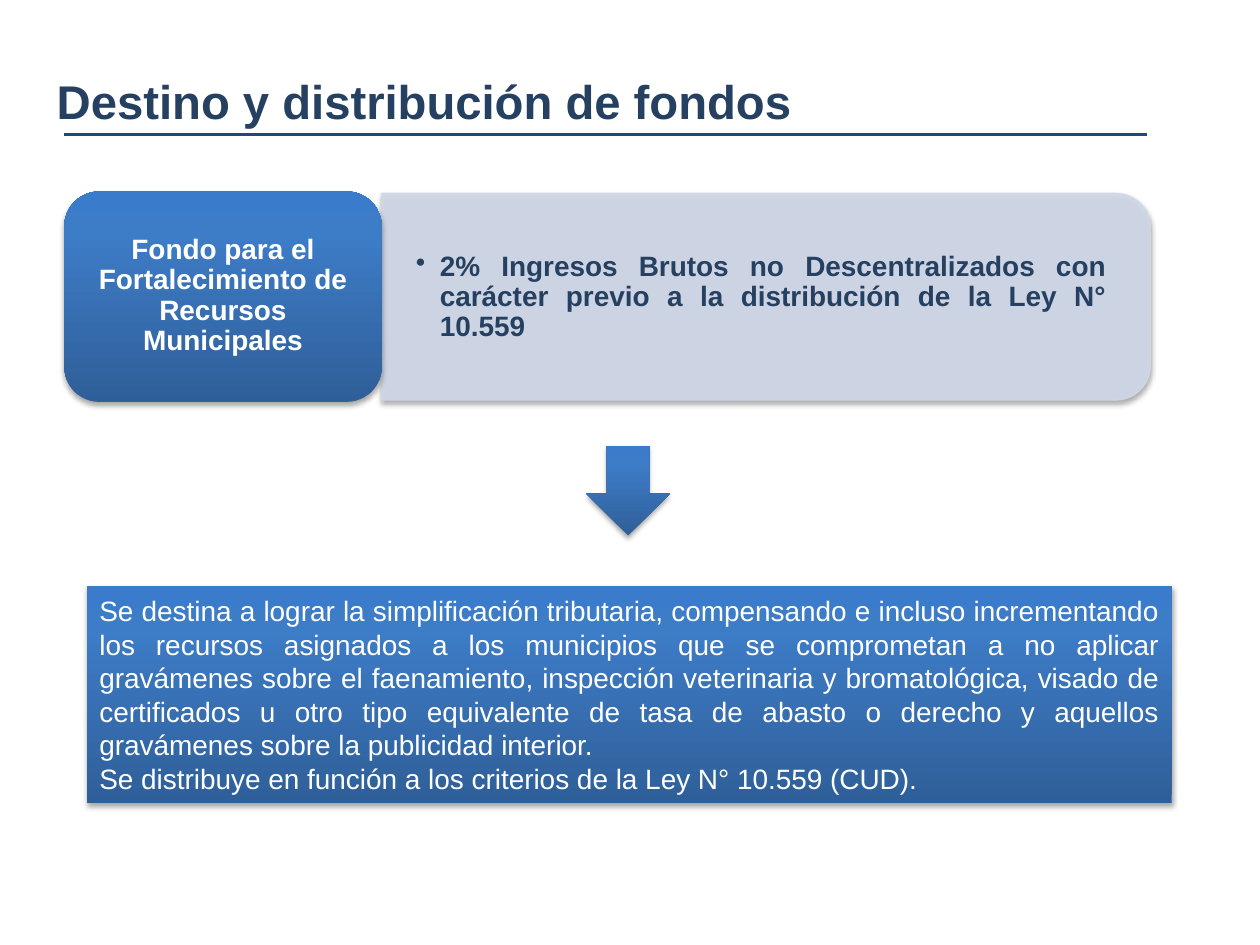
from lxml.etree import SubElement as Sub
from pptx import Presentation
from pptx.dml.color import RGBColor as RGB
from pptx.enum.shapes import MSO_CONNECTOR as Line, MSO_SHAPE as Kind
from pptx.enum.text import MSO_ANCHOR as Anchor, MSO_AUTO_SIZE as Auto, PP_ALIGN as Align
from pptx.oxml import parse_xml
from pptx.oxml.ns import nsdecls, qn
from pptx.util import Inches, Pt

HUES = {"rule": "1F497D", "navy": "254061", "white": "FFFFFF", "pale": "D0D8E8",
        "dark": "2F5F99", "mid": "3D7CC7", "light": "3A7CCB", "black": "000000"}
FONT = "Arial"


def hue(name):
    return RGB.from_string(HUES[name])


def inch(*nums):
    return [Inches(n) for n in nums]


def shade(shape):
    """Soft shadow falling straight down."""
    shape.shadow.inherit = False
    glow = shape._element.spPr.find(qn("a:effectLst"))
    drop = Sub(glow, qn("a:outerShdw"), blurRad=str(Pt(3.1)), dist=str(Pt(1.8)),
               dir="5400000", rotWithShape="0")
    tint = Sub(drop, qn("a:srgbClr"), val=HUES["black"])
    Sub(tint, qn("a:alpha"), val="35000")


def blue(slide, kind, box):
    """Shape with the blue gradient, dark at its foot."""
    shape = slide.shapes.add_shape(kind, *inch(*box))
    shape.line.fill.background()
    shape.fill.background()
    stops = "".join(f'<a:gs pos="{at * 1000}"><a:srgbClr val="{HUES[name]}"/></a:gs>'
                    for at, name in ((0, "dark"), (80, "mid"), (100, "light")))
    grad = parse_xml(f'<a:gradFill {nsdecls("a")} rotWithShape="1"><a:gsLst>{stops}</a:gsLst>'
                     '<a:lin ang="16200000" scaled="0"/></a:gradFill>')
    props = shape._element.spPr
    props.replace(props.find(qn("a:noFill")), grad)
    shade(shape)
    return shape


def write(frame, texts, color, align, size=16, bold=False, pads=(0.1, 0.05), anchor=Anchor.MIDDLE):
    frame.word_wrap = True
    frame.auto_size = Auto.NONE
    frame.vertical_anchor = anchor
    frame.margin_left = frame.margin_right = Inches(pads[0])
    frame.margin_top = frame.margin_bottom = Inches(pads[1])
    for i, text in enumerate(texts):
        para = frame.add_paragraph() if i else frame.paragraphs[0]
        para.alignment = align
        run = para.add_run()
        run.text = text
        font = run.font
        font.name, font.size, font.bold = FONT, Pt(size), bold
        font.color.rgb = hue(color)
    return frame.paragraphs[0]


def head(slide, box):
    """Title with a rule under it."""
    x, y, w, h = box
    title = slide.shapes.title
    title.left, title.top, title.width, title.height = inch(*box)
    write(title.text_frame, ["Destino y distribución de fondos"], "navy", Align.LEFT,
          size=27, bold=True, anchor=Anchor.TOP)
    base = y + h - 0.01
    rule = slide.shapes.add_connector(Line.STRAIGHT, *inch(x + 0.16, base, x + w - 0.07, base))
    rule.line.color.rgb = hue("rule")
    rule.line.width = Pt(1.5)
    Sub(rule._element.spPr, qn("a:effectLst"))


def fund(slide, box):
    """Fund name card beside a panel rounded on its right."""
    x, y, w, h = box
    card = 2.52
    wide, tall = w - card, h - 0.03

    # Panel: drawn upright, then turned about its centre
    left, top = x + card + (wide - tall) / 2, y + (h - wide) / 2
    panel = slide.shapes.add_shape(Kind.ROUND_2_SAME_RECTANGLE, *inch(left, top, tall, wide))
    panel.rotation = 90
    panel.fill.solid()
    panel.fill.fore_color.rgb = panel.line.color.rgb = hue("pale")
    panel.line.width = Pt(0.75)
    for tint in panel._element.spPr.iter(qn("a:srgbClr")):
        Sub(tint, qn("a:alpha"), val="90000")
    shade(panel)
    note = slide.shapes.add_textbox(*inch(x + card, y + 0.1, wide - 0.08, h - 0.19))
    item = write(note.text_frame, ["2% Ingresos Brutos no Descentralizados con carácter previo "
                                   "a la distribución de la Ley N° 10.559"],
                 "navy", Align.JUSTIFY, bold=True, pads=(0.27, 0.14))
    item.level = 1
    item.line_spacing = 0.9
    props = item._p.get_or_add_pPr()
    props.set("marL", str(Inches(0.19)))
    props.set("indent", str(-Inches(0.19)))
    Sub(props, qn("a:buChar"), char="•")

    # Card
    blue(slide, Kind.ROUNDED_RECTANGLE, (x, y, card, h))
    name = slide.shapes.add_textbox(*inch(x + 0.08, y + 0.08, card - 0.16, h - 0.17))
    label = write(name.text_frame, ["Fondo para el Fortalecimiento de Recursos Municipales"],
                  "white", Align.CENTER, bold=True, pads=(0.07, 0.03))
    label.line_spacing = 0.9


def use(slide, box):
    """What the fund is for."""
    shape = blue(slide, Kind.RECTANGLE, box)
    write(shape.text_frame, [
        "Se destina a lograr la simplificación tributaria, compensando e incluso incrementando "
        "los recursos asignados a los municipios que se comprometan a no aplicar gravámenes "
        "sobre el faenamiento, inspección veterinaria y bromatológica, visado de certificados "
        "u otro tipo equivalente de tasa de abasto o derecho y aquellos gravámenes sobre la "
        "publicidad interior.",
        "Se distribuye en función a los criterios de la Ley N° 10.559 (CUD)."],
        "white", Align.JUSTIFY)


def main():
    deck = Presentation()
    deck.slide_width, deck.slide_height = inch(10, 7.5)
    slide = deck.slides.add_slide(deck.slide_layouts[5])
    head(slide, (0.35, 0.52, 8.82, 0.56))
    fund(slide, (0.51, 1.52, 8.62, 1.67))
    blue(slide, Kind.DOWN_ARROW, (4.65, 3.54, 0.67, 0.71))
    use(slide, (0.69, 4.65, 8.61, 1.72))
    deck.save("out.pptx")


if __name__ == "__main__":
    main()
